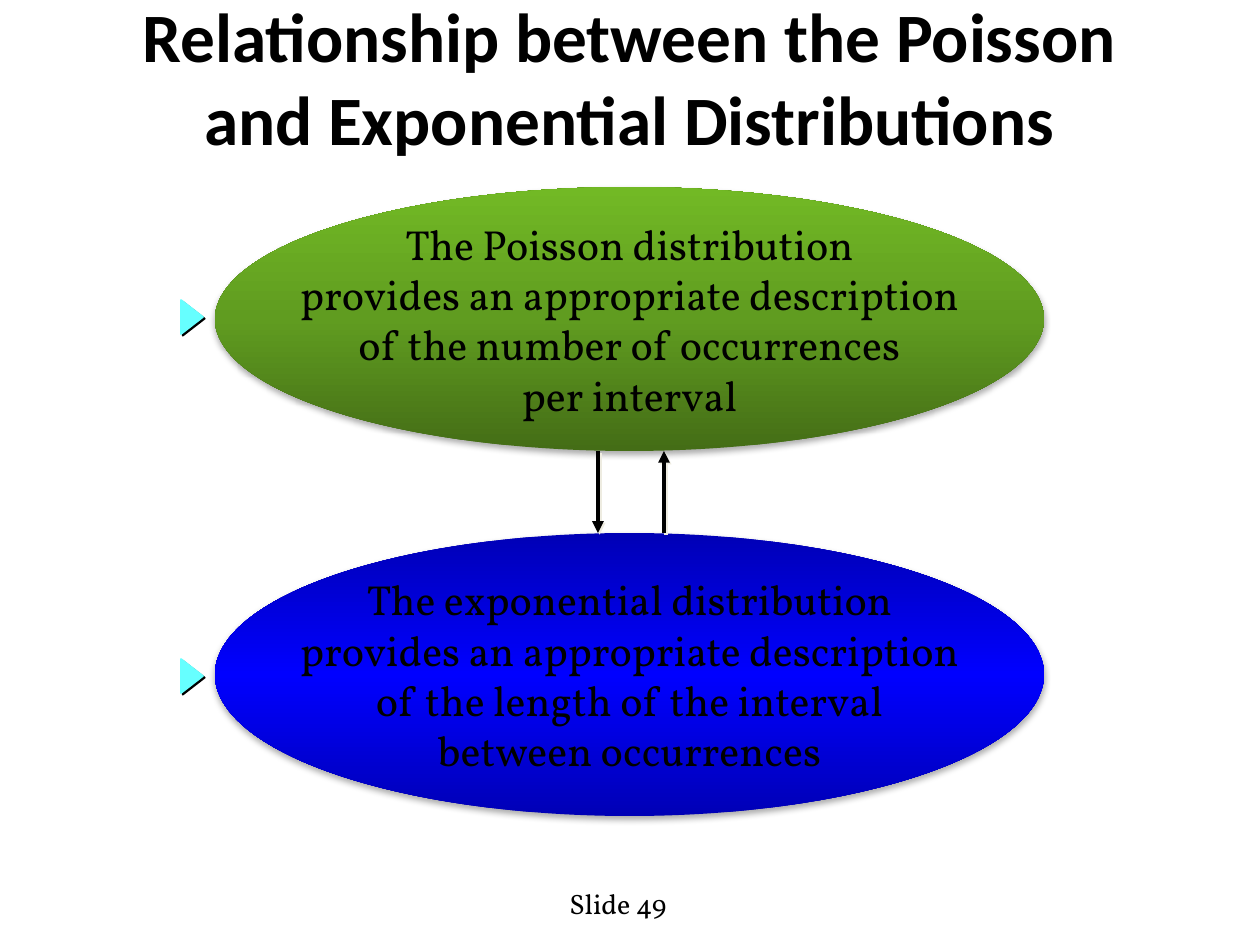
"""Build the slide relating the Poisson and exponential distributions."""
from copy import deepcopy

from lxml import etree
from pptx import Presentation
from pptx import util as u
from pptx.dml.color import RGBColor
from pptx.enum import shapes, text
from pptx.oxml.ns import qn

COLORS = {"ink": "000000", "marker": "66FFFF", "glow": "EEECE1"}
TITLE = "Relationship between the Poisson\vand Exponential Distributions"
FOOTER = "Slide 49"
DISTRIBUTIONS = [
    {"top": 187, "height": 264, "marker_mid": 317,
     "gradient": ["446D16", "609C20", "72B925"],
     "lines": ["The Poisson distribution",
               "provides an appropriate description",
               "of the number of occurrences",
               "per interval"]},
    {"top": 533, "height": 283, "marker_mid": 676,
     "gradient": ["0000B6", "0000FF", "0000B6"],
     "lines": ["The exponential distribution",
               "provides an appropriate description",
               "of the length of the interval",
               "between occurrences"]},
]
ELLIPSE_LEFT, ELLIPSE_WIDTH = 215, 829
MARKER_MID, MARKER_WIDTH, MARKER_HEIGHT = 192, 34, 22
DOWN_ARROW, UP_ARROW = 598, 664


def px(*lengths):
    return [u.Emu(round(n * 914400 / 126)) for n in lengths]


def rgb(color):
    return RGBColor.from_string(color)


def add_shadow(parent, color, alpha, blur, dist, angle):
    effects = parent.find(qn("a:effectLst"))
    if effects is None:
        effects = etree.SubElement(parent, qn("a:effectLst"))
    outer = etree.SubElement(
        effects, qn("a:outerShdw"), blurRad=str(u.Pt(blur)),
        dist=str(u.Pt(dist)), dir=str(angle * 60000), rotWithShape="0")
    tint = etree.SubElement(outer, qn("a:srgbClr"), val=color)
    etree.SubElement(tint, qn("a:alpha"), val=str(alpha * 1000))


def write(frame, lines, size, font="Vollkorn", bold=False,
          align=text.PP_ALIGN.CENTER, wrap=False):
    frame.text = "\n".join(lines)
    frame.word_wrap = wrap
    frame.auto_size = text.MSO_AUTO_SIZE.NONE
    frame.vertical_anchor = text.MSO_ANCHOR.MIDDLE
    for paragraph in frame.paragraphs:
        paragraph.alignment = align
        for run in paragraph.runs:
            run.font.size, run.font.name, run.font.bold = u.Pt(size), font, bold
            run.font.color.rgb = rgb(COLORS["ink"])


def add_ellipse(slide, top, height, gradient, lines):
    ellipse = slide.shapes.add_shape(
        shapes.MSO_SHAPE.OVAL, *px(ELLIPSE_LEFT, top, ELLIPSE_WIDTH, height))
    ellipse.shadow.inherit = False
    ellipse.line.fill.background()
    ellipse.fill.gradient()
    ellipse.fill.gradient_angle = 90
    stops = ellipse._element.spPr.find(".//" + qn("a:gsLst"))
    stops.append(deepcopy(stops[0]))
    for i, (stop, color) in enumerate(zip(ellipse.fill.gradient_stops, gradient)):
        stop.position = i / 2
        stop.color.rgb = rgb(color)
    add_shadow(ellipse._element.spPr, COLORS["ink"], 32, 3.5, 2.2, 90)
    write(ellipse.text_frame, lines, 24)


def add_marker(slide, mid):
    marker = slide.shapes.add_shape(
        shapes.MSO_SHAPE.ISOSCELES_TRIANGLE,
        *px(MARKER_MID - MARKER_WIDTH / 2, mid - MARKER_HEIGHT / 2,
            MARKER_WIDTH, MARKER_HEIGHT))
    marker.rotation = 90
    marker.shadow.inherit = False
    marker.fill.solid()
    marker.fill.fore_color.rgb = rgb(COLORS["marker"])
    marker.line.color.rgb = rgb(COLORS["marker"])
    marker.line.width = u.Pt(1)
    add_shadow(marker._element.spPr, COLORS["ink"], 100, 0, 1.4, 45)


def add_arrow(slide, x, start, end):
    arrow = slide.shapes.add_connector(
        shapes.MSO_CONNECTOR.STRAIGHT, *px(x, start, x, end))
    arrow.line.color.rgb = rgb(COLORS["ink"])
    arrow.line.width = u.Pt(2.25)
    etree.SubElement(arrow.line._get_or_add_ln(), qn("a:tailEnd"), type="triangle")
    add_shadow(arrow._element.spPr, COLORS["glow"], 100, 0, 1.4, 45)


def main():
    deck = Presentation()
    deck.slide_width, deck.slide_height = px(1260, 945)
    slide = deck.slides.add_slide(deck.slide_layouts[5])

    title = slide.shapes.title
    title.left, title.top, title.width, title.height = px(94, 20, 1071, 112)
    write(title.text_frame, [TITLE], 39.6, font="Calibri", bold=True, wrap=True)

    footer = slide.shapes.add_textbox(*px(557, 881, 125, 44))
    write(footer.text_frame, [FOOTER], 16, align=text.PP_ALIGN.LEFT)

    for item in DISTRIBUTIONS:
        add_ellipse(slide, item["top"], item["height"],
                    item["gradient"], item["lines"])
        add_marker(slide, item["marker_mid"])

    poisson, exponential = DISTRIBUTIONS
    upper, lower = poisson["top"] + poisson["height"], exponential["top"]
    add_arrow(slide, DOWN_ARROW, upper, lower)
    add_arrow(slide, UP_ARROW, lower, upper)
    deck.save("out.pptx")


if __name__ == "__main__":
    main()
